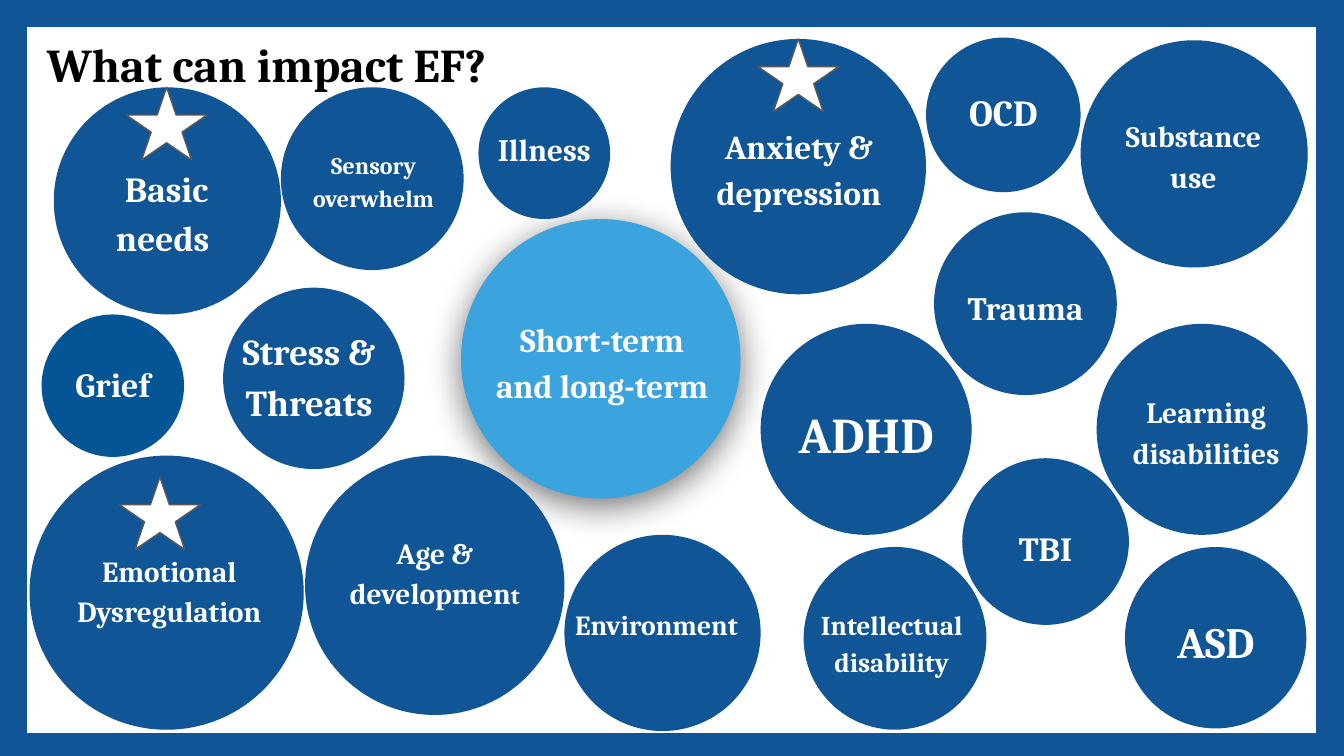
import lxml.etree
import pptx
import pptx.dml.color
import pptx.enum.shapes
import pptx.enum.text
import pptx.oxml.ns
import pptx.util

Inches = pptx.util.Inches
SHAPES = pptx.enum.shapes.MSO_SHAPE
ALIGN = pptx.enum.text.PP_ALIGN
ANCHOR = pptx.enum.text.MSO_ANCHOR

SLIDE_WIDTH = 10
SLIDE_HEIGHT = SLIDE_WIDTH * 9 / 16
FONT = "Cambria"
BLUE, GRIEF_BLUE, LIGHT_BLUE = "105696", "035595", "3BA3DD"
WHITE, BLACK, GREY = "FFFFFF", "000000", "595959"

# Label, font size, circle (left, top, diameter),
# label box (offset x, offset y, width, height), inset
FACTORS = [
    ("Basic needs ", 18.9, (0.4, 0.65, 1.69), (0.24, 0.33, 1.2, 1.16), 0.14),
    ("Sensory overwhelm", 12.8, (2.09, 0.65, 1.36), (0.07, 0.15, 1.24, 1.07), 0.12),
    ("Emotional Dysregulation", 15.6, (0.22, 3.39, 2.04), (0.13, 0.12, 1.82, 1.74), 0.17),
    ("Anxiety & depression", 17.9, (4.99, 0.29, 1.9), (0.12, 0.2, 1.67, 1.49), 0.16),
    ("Learning disabilities ", 15.8, (8.16, 2.41, 1.57), (0.12, 0.17, 1.39, 1.23), 0.13),
    ("TBI", 18.1, (7.16, 3.41, 1.24), (0.12, 0.18, 1, 0.93), 0.11),
    ("Stress & Threats", 19.6, (1.66, 2.14, 1.35), (0, 0.14, 1.28, 0.99), 0.12),
    ("Trauma", 17.5, (6.95, 1.58, 1.36), (0.12, 0.15, 1.12, 1.07), 0.12),
    ("Substance use", 15.9, (8.04, 0.3, 1.69), (0.15, 0.18, 1.38, 1.32), 0.14),
    ("ASD", 23.2, (8.37, 4.07, 1.35), (0.1, 0.24, 1.15, 0.86), 0.12),
    ("OCD", 19.7, (6.89, 0.28, 1.15), (0, 0.08, 1.15, 0.9), 0.1),
    ("ADHD", 26.8, (5.66, 2.41, 1.57), (0, 0.17, 1.57, 1.23), 0.13),
    ("Environment", 14.8, (4.2, 3.98, 1.46), (-0.04, 0, 1.69, 1.3), 0.12),
    ("Grief", 18.2, (0.31, 2.34, 1.06), (0, 0.08, 1.06, 0.83), 0.09),
    ("Illness", 16.7, (3.56, 0.65, 0.98), (0, 0.05, 0.98, 0.77), 0.08),
    ("Age & development", 15.7, (2.27, 3.39, 1.93), (0.07, -0.11, 1.79, 1.93), 0.16),
    ("Intellectual disability", 14.5, (5.98, 4.07, 1.36), (-0.13, 0.08, 1.57, 1.24), 0.12),
]
FILLS = {"Grief": GRIEF_BLUE}
ALIGNMENTS = {"Environment": ALIGN.LEFT}
LAST_LETTER_SIZES = {"Age & development": 13, "Learning disabilities ": 14.8}
STARS = [(0.94, 0.65), (0.89, 3.55), (5.64, 0.29)]


def color(hex_string):
    return pptx.dml.color.RGBColor.from_string(hex_string)


def add_shape(parent, kind, box, fill=None, line=None, line_width=0.75):
    shape = parent.add_shape(kind, *(Inches(length) for length in box))
    shape.shadow.inherit = False
    if fill:
        shape.fill.solid()
        shape.fill.fore_color.rgb = color(fill)
    else:
        shape.fill.background()
    if line:
        shape.line.color.rgb = color(line)
        shape.line.width = pptx.util.Pt(line_width)
    else:
        shape.line.fill.background()
    return shape


def set_text(shape, text, size, inset, text_color=WHITE, alignment=ALIGN.CENTER,
             spacing=1.15, last_size=None):
    frame = shape.text_frame
    frame.word_wrap = True
    frame.vertical_anchor = ANCHOR.MIDDLE
    frame.margin_left = frame.margin_right = Inches(inset)
    frame.margin_top = frame.margin_bottom = Inches(inset)
    paragraph = frame.paragraphs[0]
    paragraph.alignment = alignment
    paragraph.line_spacing = spacing
    paragraph.text = text[:-1] if last_size else text
    if last_size:
        paragraph.add_run().text = text[-1]
    for run in paragraph.runs:
        run.font.name = FONT
        run.font.size = pptx.util.Pt(size)
        run.font.bold = True
        run.font.color.rgb = color(text_color)
    if last_size:
        paragraph.runs[-1].font.size = pptx.util.Pt(last_size)


def add_soft_shadow(shape):
    qn = pptx.oxml.ns.qn
    effects = shape.element.spPr.find(qn("a:effectLst"))
    shadow = lxml.etree.SubElement(
        effects, qn("a:outerShdw"), blurRad=str(pptx.util.Pt(18.9)),
        dist=str(pptx.util.Pt(4.2)), dir="5400000", algn="bl", rotWithShape="0")
    shadow_color = lxml.etree.SubElement(shadow, qn("a:srgbClr"), val=BLACK)
    lxml.etree.SubElement(shadow_color, qn("a:alpha"), val="55000")


def add_header(slide, box):
    title = slide.shapes.add_textbox(*(Inches(length) for length in box))
    set_text(title, "What can impact EF?", 25.2, 0.1, BLACK, ALIGN.LEFT, 1)


def add_center(slide, left, top, diameter):
    group = slide.shapes.add_group_shape().shapes
    circle = add_shape(group, SHAPES.OVAL, (left, top, diameter, diameter), LIGHT_BLUE)
    add_soft_shadow(circle)
    label = add_shape(group, SHAPES.RECTANGLE,
                      (left + 0.13, top + 0.61, 1.84, 0.86), LIGHT_BLUE)
    set_text(label, "Short-term and long-term", 17.8, 0.1)


def add_factor(slide, text, size, circle, label_box, inset):
    left, top, diameter = circle
    offset_x, offset_y, width, height = label_box
    group = slide.shapes.add_group_shape().shapes
    add_shape(group, SHAPES.OVAL, (left, top, diameter, diameter), FILLS.get(text, BLUE))
    label = group.add_textbox(Inches(left + offset_x), Inches(top + offset_y),
                              Inches(width), Inches(height))
    set_text(label, text, size, inset, alignment=ALIGNMENTS.get(text, ALIGN.CENTER),
             last_size=LAST_LETTER_SIZES.get(text))


def main():
    presentation = pptx.Presentation()
    presentation.slide_width = Inches(SLIDE_WIDTH)
    presentation.slide_height = Inches(SLIDE_HEIGHT)
    slide = presentation.slides.add_slide(presentation.slide_layouts[6])

    # Frame and title
    add_shape(slide.shapes, SHAPES.RECTANGLE, (0.08, 0.08, 9.84, 5.5),
              line=BLUE, line_width=18)
    add_header(slide, (0.25, 0.16, 9.32, 0.63))

    # Central circle and the factors around it
    add_center(slide, 3.43, 1.63, 2.08)
    for factor in FACTORS:
        add_factor(slide, *factor)

    # Stars on the key factors
    for left, top in STARS:
        add_shape(slide.shapes, SHAPES.STAR_5_POINT, (left, top, 0.6, 0.54), WHITE, GREY)

    presentation.save("out.pptx")


if __name__ == "__main__":
    main()
